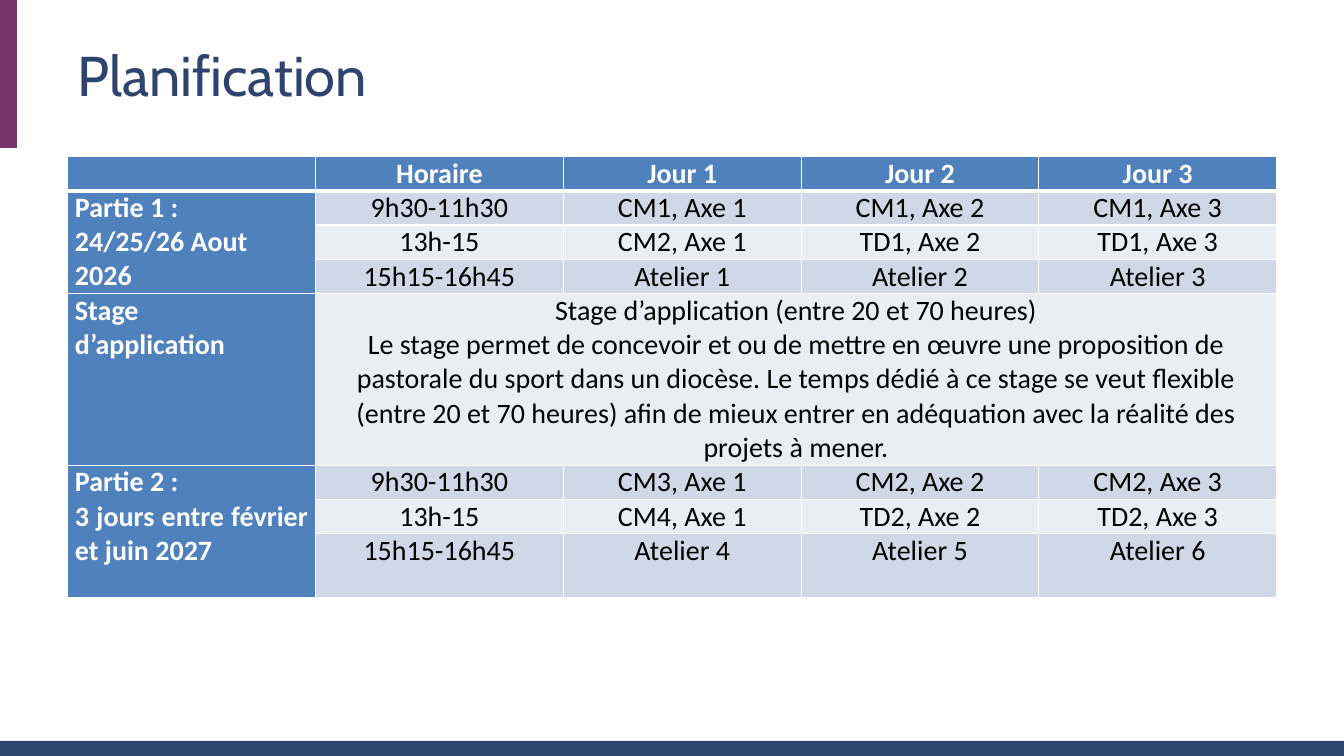
from dataclasses import dataclass

from lxml import etree
from pptx import Presentation
from pptx.dml.color import RGBColor
from pptx.enum import shapes, text
from pptx.oxml import ns
from pptx.util import Cm, Pt

LEFT, CENTER, JUSTIFY = text.PP_ALIGN.LEFT, text.PP_ALIGN.CENTER, text.PP_ALIGN.JUSTIFY


@dataclass(frozen=True)
class Theme:
    navy: str = "2E446E"
    plum: str = "76346A"
    blue: str = "4F81BD"
    bands: tuple[str, str] = ("D0D8E8", "E9EDF4")
    white: str = "FFFFFF"
    black: str = "000000"
    title_font: str = "Cabin"
    body_font: str = "Calibri"
    title_size: int = 40
    body_size: int = 20
    rule: int = 1
    header_rule: int = 3


@dataclass(frozen=True)
class Bar:
    left: float
    top: float
    width: float
    height: float
    color: str


@dataclass(frozen=True)
class Section:
    label: tuple[str, str]
    label_end: text.PP_ALIGN
    rows: tuple[tuple[str, ...], ...]


THEME = Theme()
BARS = (
    Bar(0, 18.67, 33.87, 0.38, THEME.navy),
    Bar(0, 0, 0.43, 3.73, THEME.plum),
)
HEADERS = ("", "Horaire", "Jour 1", "Jour 2", "Jour 3")
INTERNSHIP = (
    "Stage d’application (entre 20 et 70 heures)\n"
    "Le stage permet de concevoir et ou de mettre en œuvre une proposition de "
    "pastorale du sport dans un diocèse. Le temps dédié à ce stage se veut flexible "
    "(entre 20 et 70 heures) afin de mieux entrer en adéquation avec la réalité des "
    "projets à mener."
)
SECTIONS = (
    Section(("Partie 1 :", "24/25/26 Aout 2026"), LEFT, (
        ("9h30-11h30", "CM1, Axe 1", "CM1, Axe 2", "CM1, Axe 3"),
        ("13h-15", "CM2, Axe 1", "TD1, Axe 2", "TD1, Axe 3"),
        ("15h15-16h45", "Atelier 1", "Atelier 2", "Atelier 3"),
    )),
    Section(("Stage", "d’application"), JUSTIFY, ((INTERNSHIP,),)),
    Section(("Partie 2 :", "3 jours entre février et juin 2027"), JUSTIFY, (
        ("9h30-11h30", "CM3, Axe 1", "CM2, Axe 2", "CM2, Axe 3"),
        ("13h-15", "CM4, Axe 1", "TD2, Axe 2", "TD2, Axe 3"),
        ("15h15-16h45", "Atelier 4", "Atelier 5", "Atelier 6"),
    )),
)
COL_WIDTHS = (6.25, 6.25, 5.99, 5.99, 5.99)
ROW_HEIGHTS = (0.86, 0.86, 0.86, 0.86, 4.31, 0.86, 0.86, 1.6)


def draw_bar(slide, bar: Bar) -> None:
    sp = slide.shapes.add_shape(
        shapes.MSO_SHAPE.RECTANGLE, Cm(bar.left), Cm(bar.top), Cm(bar.width), Cm(bar.height)
    )
    sp.shadow.inherit = False
    sp.fill.solid()
    sp.fill.fore_color.rgb = RGBColor.from_string(bar.color)
    sp.line.fill.background()


def set_font(p, name: str, size: int, color: str, bold: bool = False) -> None:
    p.font.name = name
    p.font.size = Pt(size)
    p.font.bold = bold
    p.font.color.rgb = RGBColor.from_string(color)


def draw_title(slide, title: str) -> None:
    sp = slide.shapes.add_textbox(Cm(1.7), Cm(0.76), Cm(30.48), Cm(3.18))
    tf = sp.text_frame
    tf.word_wrap = True
    tf.margin_top = Cm(0.26)
    tf.text = title
    set_font(tf.paragraphs[0], THEME.title_font, THEME.title_size, THEME.navy)


def set_borders(cell, top: int, bottom: int) -> None:
    tc_pr = cell._tc.get_or_add_tcPr()
    for side, width in (("L", THEME.rule), ("R", THEME.rule), ("T", top), ("B", bottom)):
        ln = etree.SubElement(tc_pr, ns.qn(f"a:ln{side}"), w=str(Pt(width)))
        fill = etree.SubElement(ln, ns.qn("a:solidFill"))
        etree.SubElement(fill, ns.qn("a:srgbClr"), val=THEME.white)


def style_cell(cell, row: int, col: int) -> None:
    cell.margin_left = cell.margin_right = Cm(0.19)
    cell.margin_top = cell.margin_bottom = 0
    set_borders(
        cell,
        THEME.header_rule if row == 1 else THEME.rule,
        THEME.header_rule if row == 0 else THEME.rule,
    )
    is_header = row == 0 or col == 0
    cell.fill.solid()
    cell.fill.fore_color.rgb = RGBColor.from_string(
        THEME.blue if is_header else THEME.bands[(row - 1) % 2]
    )
    for p in cell.text_frame.paragraphs:
        p.alignment = JUSTIFY if col == 0 else CENTER
        set_font(p, THEME.body_font, THEME.body_size,
                 THEME.white if is_header else THEME.black, is_header)


def fill_row(table, row: int, first_col: int, values: tuple[str, ...]) -> None:
    for col, value in enumerate(values, first_col):
        table.cell(row, col).text = value


def draw_schedule(slide) -> None:
    table = slide.shapes.add_table(
        len(ROW_HEIGHTS), len(COL_WIDTHS), Cm(1.7), Cm(3.94),
        Cm(sum(COL_WIDTHS)), Cm(sum(ROW_HEIGHTS)),
    ).table
    table.first_row = table.horz_banding = False
    for column, width in zip(table.columns, COL_WIDTHS):
        column.width = Cm(width)
    for i, height in enumerate(ROW_HEIGHTS):
        table.rows[i].height = Cm(height)

    fill_row(table, 0, 0, HEADERS)
    labels = []
    row = 1
    for section in SECTIONS:
        label = table.cell(row, 0)
        label.text = "\n".join(section.label)
        labels.append((label, section.label_end))
        last = row + len(section.rows) - 1
        if last > row:
            label.merge(table.cell(last, 0))
        for values in section.rows:
            fill_row(table, row, 1, values)
            if len(values) == 1:
                table.cell(row, 1).merge(table.cell(row, len(COL_WIDTHS) - 1))
            row += 1

    for r in range(len(ROW_HEIGHTS)):
        for c in range(len(COL_WIDTHS)):
            style_cell(table.cell(r, c), r, c)
    for label, alignment in labels:
        label.text_frame.paragraphs[-1].alignment = alignment


def main() -> None:
    prs = Presentation()
    prs.slide_width, prs.slide_height = Cm(33.87), Cm(19.05)
    slide = prs.slides.add_slide(prs.slide_layouts[6])
    for bar in BARS:
        draw_bar(slide, bar)
    draw_schedule(slide)
    draw_title(slide, "Planification")
    prs.save("out.pptx")


if __name__ == "__main__":
    main()
